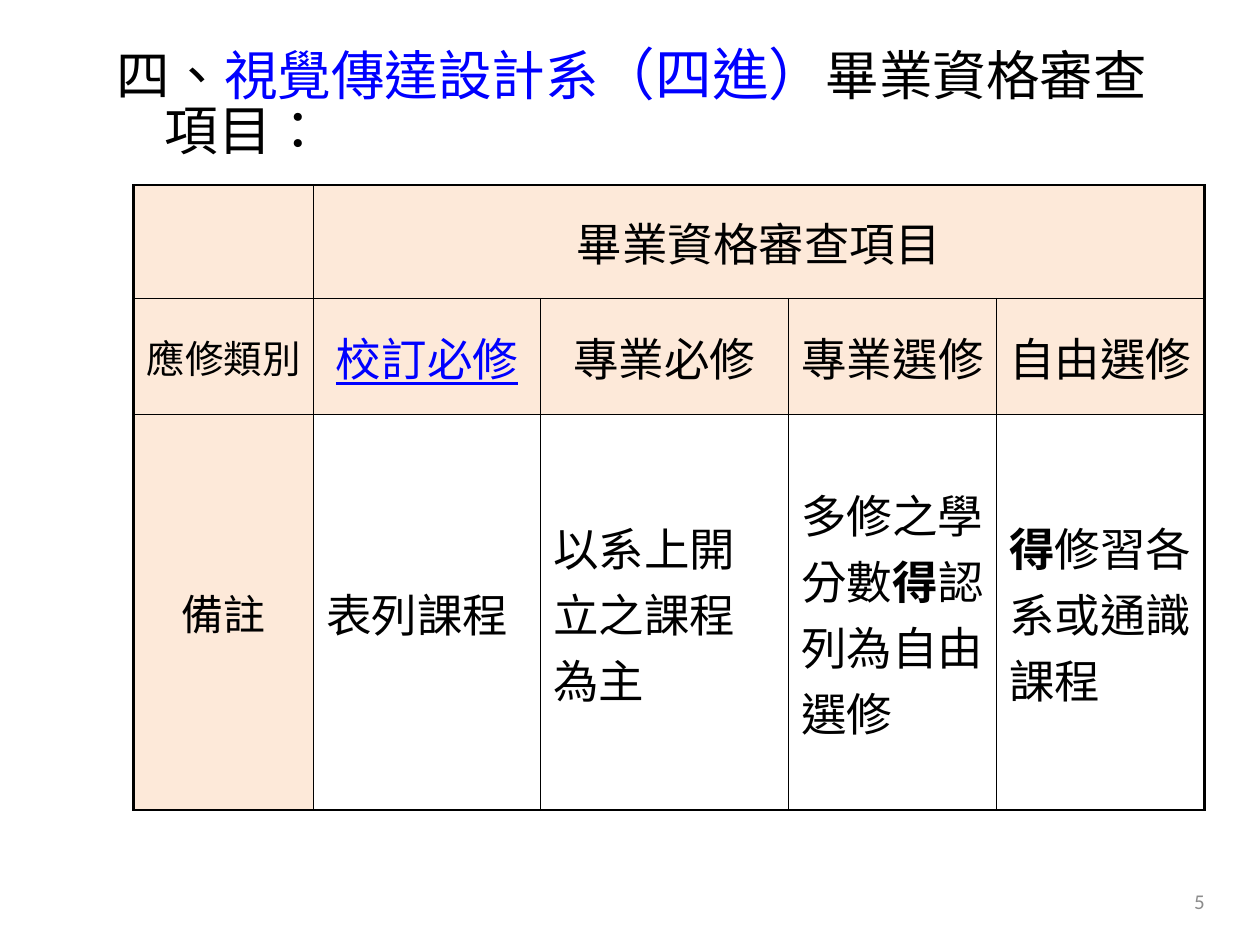
import pptx
import pptx.util
import pptx.dml.color
import pptx.enum.text
import pptx.oxml.ns
import lxml.etree

Inches, Pt = pptx.util.Inches, pptx.util.Pt
ALIGN = pptx.enum.text.PP_ALIGN
MIDDLE = pptx.enum.text.MSO_ANCHOR.MIDDLE
CJK = "Noto Sans CJK JP"
BLUE, PEACH = "0000FF", "FDE9D9"

HEADERS = ["應修類別", "校訂必修", "專業必修", "專業選修", "自由選修"]
NOTES = [
    [("備註", {"size": 24})],
    [("表列課程", {})],
    [("以系上開立之課程為主", {})],
    [("多修之學分數", {}), ("得", {"bold": True}), ("認列為自由選修", {})],
    [("得", {"bold": True}), ("修習各系或通識課程", {})],
]
COLS = [1.43, 1.8, 1.97, 1.65, 1.65]
ROWS = [0.9, 0.92, 3.14]


def rgb(color):
    """Return the colour object for a hex string."""
    return pptx.dml.color.RGBColor.from_string(color)


def sub(parent, tag, **attrs):
    """Append a DrawingML element to parent."""
    return lxml.etree.SubElement(parent, pptx.oxml.ns.qn(tag), attrs)


def add_run(p, text, size=26, color="000000", font="Times New Roman", bold=False, underline=False):
    """Add a formatted run to a paragraph."""
    r = p.add_run()
    r.text = text
    r.font.size, r.font.name = Pt(size), font
    r.font.bold, r.font.underline = bold, underline
    r.font.color.rgb = rgb(color)
    rPr = r.font._element
    rPr.set("lang", "zh-TW")
    sub(rPr, "a:ea", typeface=CJK)


def add_box(s, left, top, width, height):
    """Add a wrapped, vertically centred text box and return its paragraph."""
    tf = s.shapes.add_textbox(Inches(left), Inches(top), Inches(width), Inches(height)).text_frame
    tf.word_wrap = True
    tf.vertical_anchor = MIDDLE
    return tf.paragraphs[0]


def add_title(s, left, top, width, height):
    """Place the two-line heading with a hanging indent."""
    p = add_box(s, left, top, width, height)
    p.line_spacing = 0.84
    pPr = p._p.get_or_add_pPr()
    pPr.set("marL", str(Inches(0.38)))
    pPr.set("indent", str(-Inches(0.38)))
    add_run(p, "四、", size=30.6, font=CJK)
    add_run(p, "視覺傳達設計系", size=30.6, font=CJK, color=BLUE)
    add_run(p, "（四進）", size=32.4, font=CJK, color=BLUE)
    add_run(p, "畢業資格審查", size=30.6, font=CJK)
    p.add_line_break()
    add_run(p, "項目：", size=30.6, font=CJK)


def set_borders(cell, outer):
    """Draw black cell borders, heavier on the outer sides."""
    tcPr = cell._tc.get_or_add_tcPr()
    for i, side in enumerate("LRTB"):
        ln = sub(tcPr, f"a:ln{side}", w=str(Pt(1.5 if side in outer else 1)))
        sub(sub(ln, "a:solidFill"), "a:srgbClr", val="000000")
        tcPr.remove(ln)
        tcPr.insert(i, ln)


def fill_cell(cell, runs, align):
    """Write runs into a vertically centred cell."""
    cell.vertical_anchor = MIDDLE
    p = cell.text_frame.paragraphs[0]
    p.alignment = align
    for text, fmt in runs:
        add_run(p, text, **fmt)


def add_requirements(s, left, top, width, height):
    """Place the table of graduation requirements."""
    table = s.shapes.add_table(
        len(ROWS), len(COLS), Inches(left), Inches(top), Inches(width), Inches(height)
    ).table
    for col, w in zip(table.columns, COLS):
        col.width = Inches(w)
    for row, h in zip(table.rows, ROWS):
        row.height = Inches(h)
    last_row, last_col = len(ROWS) - 1, len(COLS) - 1
    for i in range(len(ROWS)):
        for j in range(len(COLS)):
            cell = table.cell(i, j)
            if i < last_row or j == 0:
                cell.fill.solid()
                cell.fill.fore_color.rgb = rgb(PEACH)
            else:
                cell.fill.background()
            edges = {"L": j == 0, "R": j == last_col or (i == 0 and j > 0),
                     "T": i == 0, "B": i == last_row}
            set_borders(cell, [side for side, on in edges.items() if on])
    table.cell(0, 1).merge(table.cell(0, last_col))
    fill_cell(table.cell(0, 1), [("畢業資格審查項目", {})], ALIGN.CENTER)
    formats = {0: {"size": 22}, 1: {"color": BLUE, "underline": True}}
    for j, (header, runs) in enumerate(zip(HEADERS, NOTES)):
        fill_cell(table.cell(1, j), [(header, formats.get(j, {}))], ALIGN.CENTER)
        fill_cell(table.cell(2, j), runs, ALIGN.LEFT if j else ALIGN.CENTER)


def add_page_number(s, left, top, width, height):
    """Place the page number at the right of its box."""
    p = add_box(s, left, top, width, height)
    p.alignment = ALIGN.RIGHT
    add_run(p, "5", size=12, color="8C8C8C", font="Calibri")


def main():
    """Build and save the slide."""
    prs = pptx.Presentation()
    prs.slide_width, prs.slide_height = Inches(10), Inches(7.5)
    s = prs.slides.add_slide(prs.slide_layouts[6])
    add_page_number(s, 7.33, 6.95, 2.33, 0.4)
    add_requirements(s, 1.06, 1.47, sum(COLS), sum(ROWS))
    add_title(s, 0.83, 0.29, 8.83, 1.09)
    prs.save("out.pptx")


if __name__ == "__main__":
    main()
